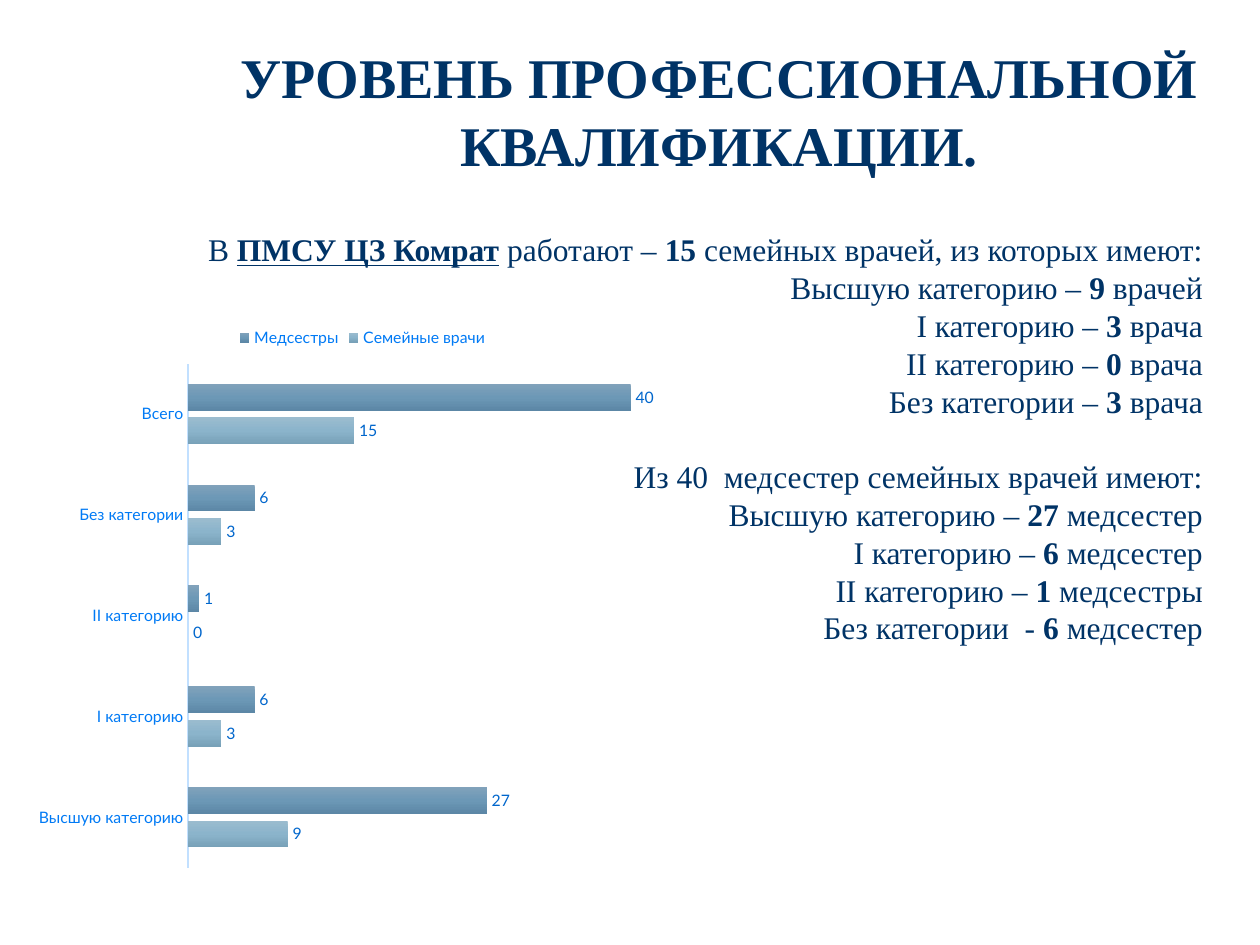
"""Build the slide on professional qualification levels of doctors and nurses."""
import copy
from dataclasses import dataclass

import pptx
import pptx.chart.data
import pptx.dml.color
import pptx.enum.chart
import pptx.enum.dml
import pptx.enum.text
import pptx.util

Cm = pptx.util.Cm
Pt = pptx.util.Pt
RGBColor = pptx.dml.color.RGBColor
Align = pptx.enum.text.PP_ALIGN

NAVY = RGBColor(0x00, 0x33, 0x66)
AXIS_BLUE = RGBColor(0x00, 0x7A, 0xF5)
LABEL_BLUE = RGBColor(0x00, 0x66, 0xCC)
PALE_BLUE = RGBColor(0xC2, 0xE0, 0xFF)
DOCTOR_SHADES = (RGBColor(0x9B, 0xBC, 0xCF), RGBColor(0x8B, 0xB4, 0xCB), RGBColor(0x78, 0xA1, 0xB8))
NURSE_SHADES = (RGBColor(0x81, 0xA2, 0xBB), RGBColor(0x6C, 0x98, 0xB6), RGBColor(0x5C, 0x87, 0xA6))

TEXT_FONT = "Times New Roman"
CHART_FONT = "Lato"
LINE_HEIGHT = 1.2


@dataclass(frozen=True)
class Box:
    left: float
    top: float
    width: float
    height: float

    def lengths(self) -> tuple:
        return Cm(self.left), Cm(self.top), Cm(self.width), Cm(self.height)


@dataclass(frozen=True)
class Run:
    text: str
    bold: bool = False
    underline: bool = False


@dataclass(frozen=True)
class Line:
    runs: tuple
    lines_before: int = 0


@dataclass(frozen=True)
class Staff:
    name: str
    counts: tuple
    shades: tuple


def counted(lead: str, count: str, tail: str) -> Line:
    return Line((Run(lead), Run(count, bold=True), Run(tail)))


TITLE = (Line((Run("УРОВЕНЬ ПРОФЕССИОНАЛЬНОЙ КВАЛИФИКАЦИИ.", bold=True),)),)
SUMMARY = (
    Line((
        Run("В "),
        Run("ПМСУ ЦЗ Комрат", bold=True, underline=True),
        Run(" работают – "),
        Run("15 ", bold=True),
        Run("семейных врачей, из которых имеют:"),
    )),
    counted("Высшую категорию –", " 9", " врачей"),
    counted("I категорию – ", "3 ", "врача"),
    counted("II категорию – ", "0 ", "врача"),
    counted("Без категории – ", "3 ", "врача"),
    Line((Run("Из 40  медсестер семейных врачей имеют:"),), lines_before=1),
    counted("Высшую категорию –", " 27", " медсестер"),
    counted("I категорию – ", "6 ", "медсестер"),
    counted("II категорию – ", "1 ", "медсестры"),
    counted("Без категории  - ", "6 ", "медсестер"),
)
CATEGORIES = ("Высшую категорию", "I категорию", "II категорию", "Без категории", "Всего")
STAFF = (
    Staff("Семейные врачи", (9, 3, 0, 3, 15), DOCTOR_SHADES),
    Staff("Медсестры", (27, 6, 1, 6, 40), NURSE_SHADES),
)


def set_font(font, *, name: str, size: float, color: RGBColor) -> None:
    font.name = name
    font.size = Pt(size)
    font.color.rgb = color


def add_text(slide, lines: tuple, box: Box, *, size: float, alignment) -> None:
    frame = slide.shapes.add_textbox(*box.lengths()).text_frame
    frame.word_wrap = True
    pitch = Pt(size * LINE_HEIGHT)
    for index, line in enumerate(lines):
        paragraph = frame.add_paragraph() if index else frame.paragraphs[0]
        paragraph.alignment = alignment
        paragraph.line_spacing = pitch
        if line.lines_before:
            paragraph.space_before = pitch * line.lines_before
        for item in line.runs:
            run = paragraph.add_run()
            run.text = item.text
            set_font(run.font, name=TEXT_FONT, size=size, color=NAVY)
            run.font.bold = item.bold
            run.font.underline = item.underline


def fill_gradient(fill, shades: tuple) -> None:
    fill.gradient()
    fill.gradient_angle = 270
    first = fill.gradient_stops[0]._gs
    first.addnext(copy.deepcopy(first))
    for index, (stop, shade) in enumerate(zip(fill.gradient_stops, shades)):
        stop.color.rgb = shade
        stop.position = index / (len(shades) - 1)


def add_staff_chart(slide, staff: tuple, box: Box) -> None:
    data = pptx.chart.data.CategoryChartData()
    data.categories = CATEGORIES
    for group in staff:
        data.add_series(group.name, group.counts)
    kind = pptx.enum.chart.XL_CHART_TYPE.BAR_CLUSTERED
    chart = slide.shapes.add_chart(kind, *box.lengths(), data).chart
    set_font(chart.font, name=CHART_FONT, size=10, color=NAVY)
    chart.has_title = False
    chart.has_legend = True
    chart.legend.position = pptx.enum.chart.XL_LEGEND_POSITION.TOP
    chart.legend.include_in_layout = False
    set_font(chart.legend.font, name=CHART_FONT, size=9, color=AXIS_BLUE)

    axis = chart.category_axis
    axis.major_tick_mark = pptx.enum.chart.XL_TICK_MARK.NONE
    set_font(axis.tick_labels.font, name=CHART_FONT, size=9, color=AXIS_BLUE)
    axis.format.line.color.rgb = PALE_BLUE
    axis.format.line.width = Pt(1)
    chart.value_axis.has_major_gridlines = False
    chart.value_axis.visible = False

    plot = chart.plots[0]
    plot.vary_by_categories = False
    plot.gap_width = 150
    plot.overlap = -25
    for series, group in zip(plot.series, staff):
        series.invert_if_negative = False
        fill_gradient(series.format.fill, group.shades)
        labels = series.data_labels
        labels.show_value = True
        labels.position = pptx.enum.chart.XL_LABEL_POSITION.OUTSIDE_END
        set_font(labels.font, name=CHART_FONT, size=9, color=LABEL_BLUE)


def main() -> None:
    presentation = pptx.Presentation()
    presentation.slide_width = Cm(25.4)
    presentation.slide_height = Cm(19.05)
    slide = presentation.slides.add_slide(presentation.slide_layouts[6])
    add_text(slide, TITLE, Box(4.5, 0.74, 20, 3), size=32, alignment=Align.CENTER)
    add_text(slide, SUMMARY, Box(1.5, 4.52, 23, 8.71), size=18, alignment=Align.RIGHT)
    add_staff_chart(slide, STAFF, Box(0.51, 6.32, 13.59, 11.4))
    presentation.save("out.pptx")


if __name__ == "__main__":
    main()
